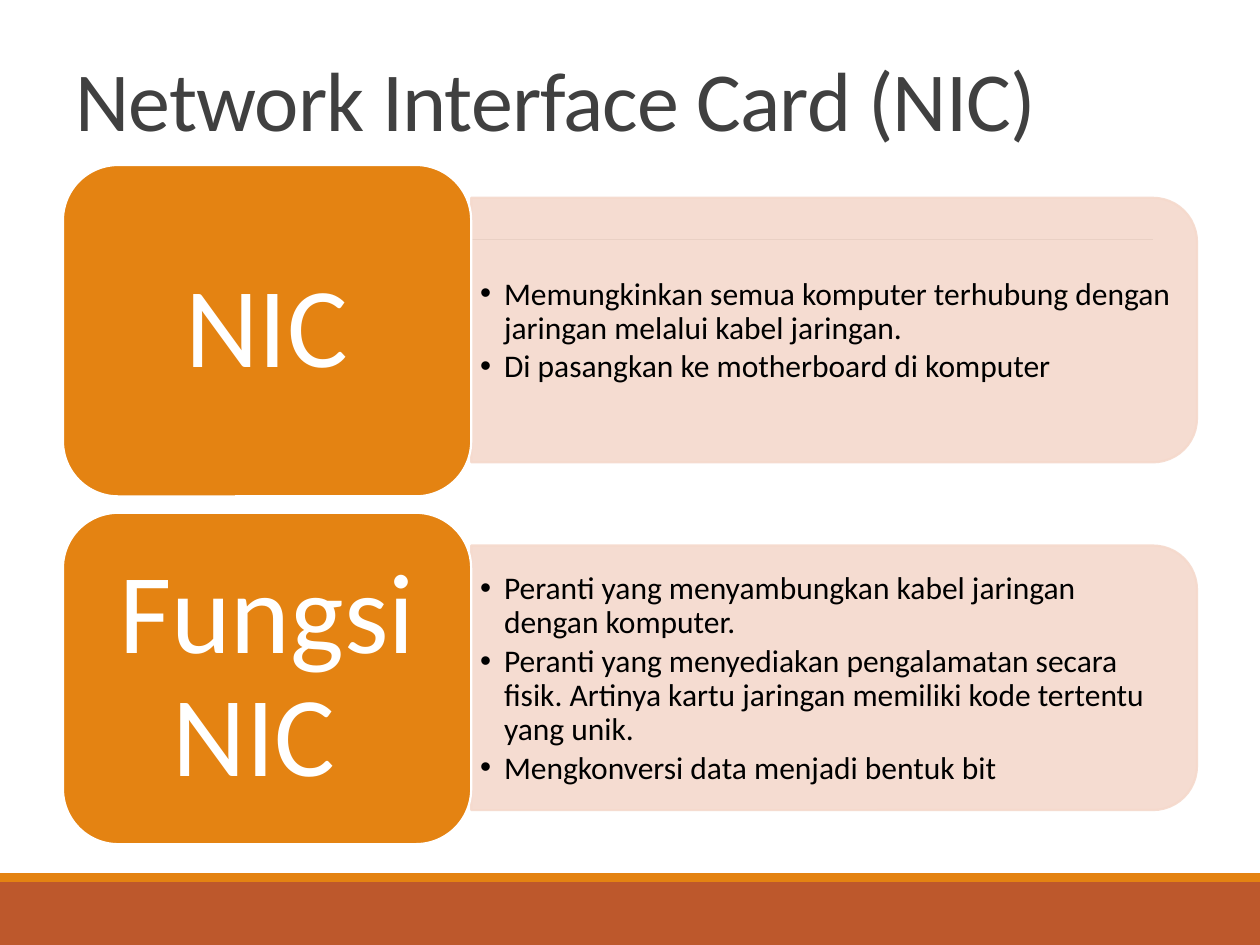
from lxml.etree import SubElement as Sub
from pptx import Presentation
from pptx.dml.color import RGBColor
from pptx.enum.shapes import MSO_CONNECTOR as Conn, MSO_SHAPE as Kind
from pptx.enum.text import MSO_ANCHOR as Anchor, MSO_AUTO_SIZE as Auto, PP_ALIGN as Align
from pptx.oxml.ns import qn
from pptx.util import Inches, Pt

ORANGE, RUST, PINK = "E48312", "BD582C", "F5D9CC"
ROWS = [
    ("NIC", [
        "Memungkinkan semua komputer terhubung dengan jaringan melalui kabel jaringan.",
        "Di pasangkan ke motherboard di komputer",
    ]),
    ("Fungsi NIC ", [
        "Peranti yang menyambungkan kabel jaringan dengan komputer.",
        "Peranti yang menyediakan pengalamatan secara fisik. "
        "Artinya kartu jaringan memiliki kode tertentu yang unik.",
        "Mengkonversi data menjadi bentuk bit",
    ]),
]
TOP, STEP = 1.31, 2.76


def paint(part, color):
    """Give a fill or line format a solid colour."""
    part.fore_color.rgb = RGBColor.from_string(color)


def place(shape, x, y, w, h):
    """Move and size a shape in inches."""
    shape.left, shape.top = Inches(x), Inches(y)
    shape.width, shape.height = Inches(w), Inches(h)


def add_box(slide, kind, x, y, w, h, fill, edge=None):
    """Add a filled preset shape with an optional outline."""
    box = slide.shapes.add_shape(kind, Inches(x), Inches(y), Inches(w), Inches(h))
    box.shadow.inherit = False
    box.fill.solid()
    paint(box.fill, fill)
    if edge:
        box.line.fill.solid()
        paint(box.line.fill, edge)
        box.line.width = Pt(1.25)
    else:
        box.line.fill.background()
    return box


def set_frame(frame, anchor, side, end):
    """Set the anchor, wrapping and insets of a text frame."""
    frame.word_wrap = True
    frame.auto_size = Auto.NONE
    frame.vertical_anchor = anchor
    frame.margin_left = frame.margin_right = Inches(side)
    frame.margin_top = frame.margin_bottom = Inches(end)


def style(para, size, color, space, align):
    """Format a paragraph and its runs."""
    para.alignment = align
    para.line_spacing = space
    para.space_before = Pt(0)
    for run in para.runs:
        run.font.name = "Calibri"
        run.font.size = Pt(size)
        run.font.color.rgb = RGBColor.from_string(color)


def add_rule(slide):
    """Draw the thin line under the title."""
    y = Inches(1.9)
    rule = slide.shapes.add_connector(Conn.STRAIGHT, Inches(0.98), y, Inches(9.15), y)
    rule.line.fill.solid()
    paint(rule.line.fill, "808080")
    rule.line.width = Pt(0.5)
    Sub(rule.element.spPr, qn("a:effectLst"))


def set_title(slide, text):
    """Fill the title placeholder."""
    title = slide.shapes.title
    place(title, 0.5, 0.3, 9, 0.93)
    frame = title.text_frame
    frame.text = text
    set_frame(frame, Anchor.BOTTOM, 0.1, 0.05)
    style(frame.paragraphs[0], 48, "404040", 0.85, Align.LEFT)
    frame.paragraphs[0].runs[0].font._element.set("spc", "-50")


def add_panel(slide, y):
    """Add the translucent panel, turned a quarter to the right."""
    panel = add_box(slide, Kind.ROUND_2_SAME_RECTANGLE, 5.57, y - 1.57, 2.1, 5.76, PINK, PINK)
    panel.rotation = 90
    for tint in panel.element.spPr.iter(qn("a:srgbClr")):
        Sub(tint, qn("a:alpha"), val="90000")


def fill_list(body, y, items):
    """Fill a body placeholder with bullets and bring it to the front."""
    place(body, 3.74, y + 0.37, 5.66, 1.9)
    frame = body.text_frame
    frame.text = "\n".join(items)
    set_frame(frame, Anchor.MIDDLE, 0.07, 0.04)
    for para in frame.paragraphs:
        para.level = 1
        props = para._p.get_or_add_pPr()
        props.set("marL", str(Inches(0.19)))
        props.set("indent", str(-Inches(0.19)))
        Sub(props, qn("a:buChar"), char="•")
        style(para, 18, "000000", 0.9, Align.LEFT)
        para.space_after = Pt(2.7)
    body.element.getparent().append(body.element)


def add_label(slide, y, text):
    """Add the orange heading block of a row."""
    label = add_box(slide, Kind.ROUNDED_RECTANGLE, 0.5, y, 3.24, 2.63, ORANGE, "FFFFFF")
    frame = label.text_frame
    frame.text = text
    set_frame(frame, Anchor.MIDDLE, 0.27, 0.14)
    style(frame.paragraphs[0], 65, "FFFFFF", 0.9, Align.CENTER)


def main():
    """Build and save the slide."""
    deck = Presentation()
    deck.slide_width, deck.slide_height = Inches(10), Inches(7.5)
    slide = deck.slides.add_slide(deck.slide_layouts[3])
    bodies = list(slide.placeholders)[1:]
    add_box(slide, Kind.RECTANGLE, 0, 7, 10, 0.5, RUST)
    add_box(slide, Kind.RECTANGLE, 0, 6.93, 10, 0.07, ORANGE)
    add_rule(slide)
    set_title(slide, "Network Interface Card (NIC)")
    for row, (body, (name, items)) in enumerate(zip(bodies, ROWS)):
        y = TOP + row * STEP
        add_panel(slide, y)
        fill_list(body, y, items)
        add_label(slide, y, name)
    deck.save("out.pptx")


if __name__ == "__main__":
    main()
